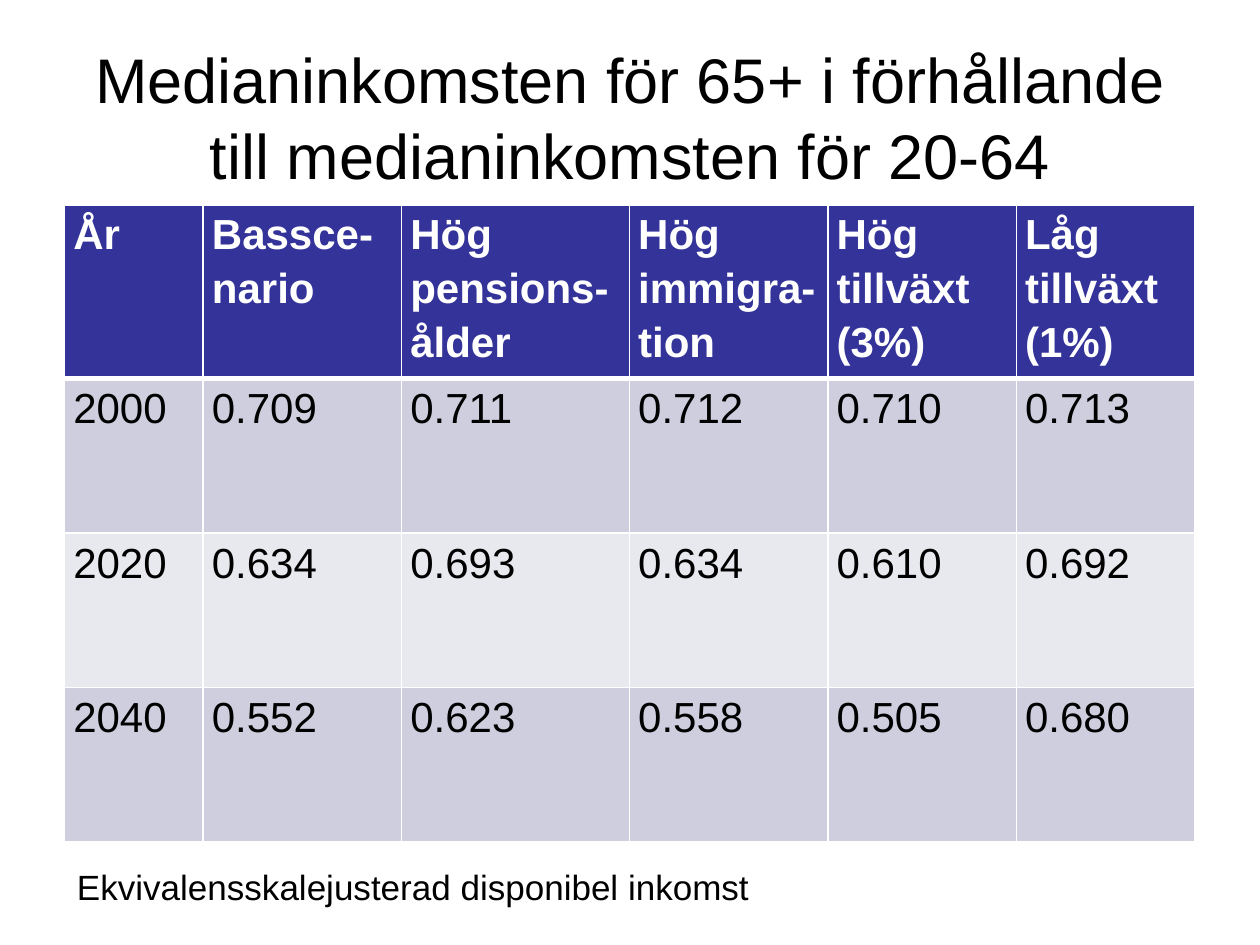
from lxml import etree
from pptx import Presentation
from pptx import util as u
from pptx.dml.color import RGBColor
from pptx.enum import text
from pptx.oxml.ns import qn

COLORS = {"text": "000000", "white": "FFFFFF", "header": "333399",
          "odd": "CECEDE", "even": "E8E8EF"}
HEADERS = ["År", "Bassce-nario", "Hög pensions-ålder", "Hög immigra-tion",
           "Hög tillväxt (3%)", "Låg tillväxt (1%)"]
ROWS = [
    ["2000", "0.709", "0.711", "0.712", "0.710", "0.713"],
    ["2020", "0.634", "0.693", "0.634", "0.610", "0.692"],
    ["2040", "0.552", "0.623", "0.558", "0.505", "0.680"],
]
COL_WIDTHS = [79.2, 113.4, 130.2, 113.4, 107.7, 102.2]
ROW_HEIGHT = 88.3


def rgb(name):
    return RGBColor.from_string(COLORS[name])


def write(tf, content, size, color="text", bold=False, align=None, spacing=None):
    p = tf.paragraphs[0]
    p.alignment = align
    p.line_spacing = spacing
    r = p.add_run()
    r.text = content
    r.font.name = "Arial"
    r.font.size = u.Pt(size)
    r.font.bold = bold
    r.font.color.rgb = rgb(color)


class Deck:
    def __init__(self, width, height):
        self.prs = Presentation()
        self.prs.slide_width, self.prs.slide_height = u.Pt(width), u.Pt(height)
        self.s = self.prs.slides.add_slide(self.prs.slide_layouts[6])

    def textbox(self, content, box, anchor=text.MSO_ANCHOR.TOP, **fmt):
        tf = self.s.shapes.add_textbox(*map(u.Pt, box)).text_frame
        tf.word_wrap = True
        tf.vertical_anchor = anchor
        write(tf, content, **fmt)

    def borders(self, cell, bottom):
        """Draw white borders; they must precede the fill in the cell properties."""
        tcPr = cell._tc.get_or_add_tcPr()
        for i, side in enumerate(("lnL", "lnR", "lnT", "lnB")):
            width = bottom if side == "lnB" else 1
            ln = etree.Element(qn(f"a:{side}"), w=str(u.Pt(width)))
            fill = etree.SubElement(ln, qn("a:solidFill"))
            etree.SubElement(fill, qn("a:srgbClr"), val=COLORS["white"])
            tcPr.insert(i, ln)

    def cell(self, cell, content, fill, bottom=1, **fmt):
        cell.margin_left = cell.margin_right = u.Pt(5)
        cell.margin_top = cell.margin_bottom = 0
        cell.fill.solid()
        cell.fill.fore_color.rgb = rgb(fill)
        self.borders(cell, bottom)
        write(cell.text_frame, content, size=24, spacing=1.15, **fmt)

    def table(self, left, top, headers, rows):
        t = self.s.shapes.add_table(
            len(rows) + 1, len(headers), u.Pt(left), u.Pt(top),
            u.Pt(sum(COL_WIDTHS)), u.Pt(ROW_HEIGHT * (len(rows) + 1))).table
        for col, width in zip(t.columns, COL_WIDTHS):
            col.width = u.Pt(width)
        for row in t.rows:
            row.height = u.Pt(ROW_HEIGHT)
        for c, label in enumerate(headers):
            self.cell(t.cell(0, c), label, "header", bottom=3,
                      color="white", bold=True)
        for r, values in enumerate(rows, 1):
            for c, value in enumerate(values):
                self.cell(t.cell(r, c), value, "odd" if r % 2 else "even")


def main():
    deck = Deck(720, 540)
    deck.textbox("Medianinkomsten för 65+ i förhållande till medianinkomsten för 20-64",
                 (36, 21.6, 648, 90), anchor=text.MSO_ANCHOR.MIDDLE,
                 size=36, align=text.PP_ALIGN.CENTER)
    deck.table(36.9, 117, HEADERS, ROWS)
    deck.textbox("Ekvivalensskalejusterad disponibel inkomst",
                 (36.9, 491, 646.6, 31.5), size=20)
    deck.prs.save("out.pptx")


if __name__ == "__main__":
    main()
